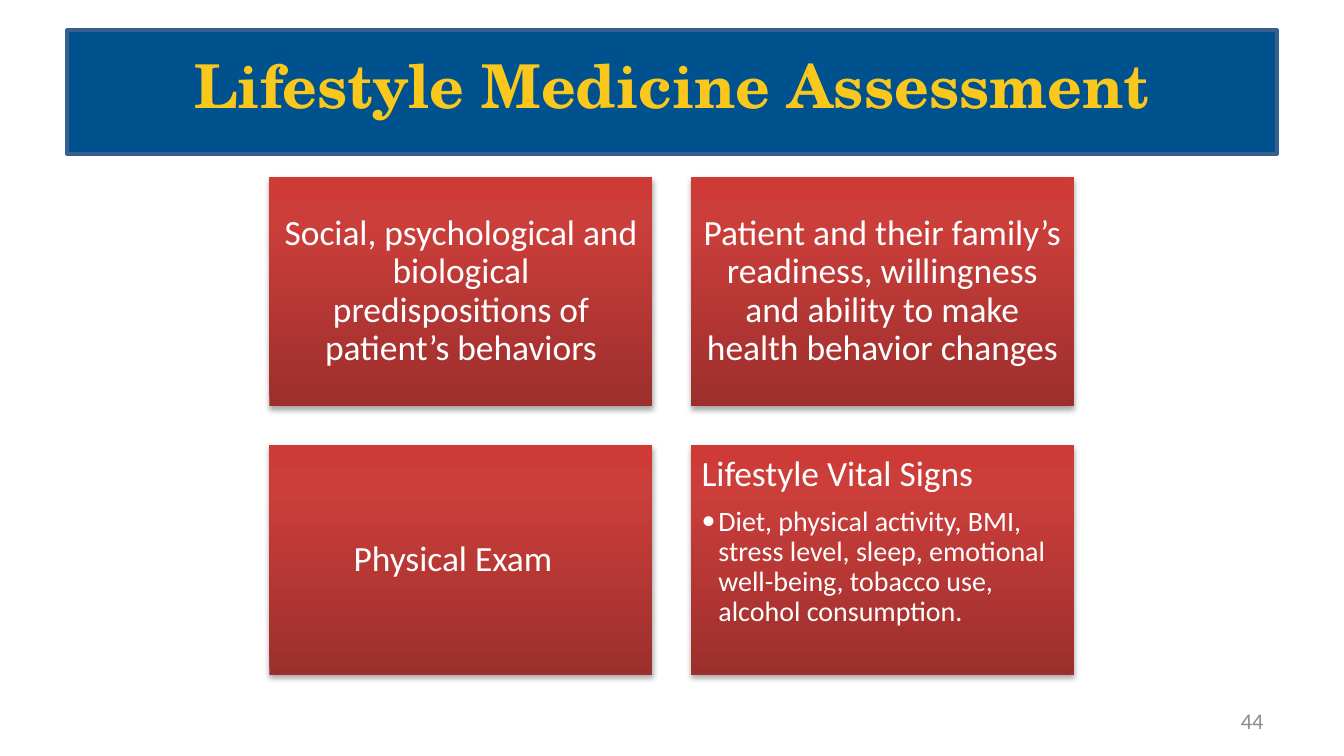
from copy import deepcopy
from dataclasses import dataclass
from itertools import product

from lxml.etree import SubElement
from pptx import Presentation
from pptx.dml.color import RGBColor
from pptx.enum.shapes import MSO_SHAPE as Shape
from pptx.enum.text import MSO_ANCHOR as Anchor, PP_ALIGN as Align
from pptx.oxml.ns import qn
from pptx.util import Pt

PX = 4572  # 200 px to the inch
COLORS = {
    "banner": "00528F", "banner_line": "3A5F8C", "title": "FAC71C",
    "white": "FFFFFF", "number": "8C8C8C", "shadow": "000000",
}
CARD_STOPS = [(0, "9C2F2D"), (0.8, "CB3E3A"), (1, "CE3B37")]
CARD_LEFT, CARD_TOP, CARD_WIDTH, CARD_HEIGHT = 401, 263, 570, 342
STEP_X, STEP_Y = 627, 399
INSET = 16
INDENT = 25


@dataclass(frozen=True)
class Card:
    heading: str
    bullet: str = ""
    right_inset: int = INSET


CARDS = [
    Card("Social, psychological and biological predispositions of patient’s behaviors"),
    Card("Patient and their family’s readiness, willingness and ability to make "
         "health behavior changes"),
    Card("Physical Exam", right_inset=40),
    Card("Lifestyle Vital Signs",
         "Diet, physical activity, BMI, stress level, sleep, emotional well-being, "
         "tobacco use, alcohol consumption."),
]


def rgb(name: str) -> RGBColor:
    return RGBColor.from_string(COLORS[name])


def set_frame(frame, anchor, left: int, top: int, right: int, bottom: int) -> None:
    frame.word_wrap = True
    frame.vertical_anchor = anchor
    frame.margin_left, frame.margin_top = left * PX, top * PX
    frame.margin_right, frame.margin_bottom = right * PX, bottom * PX


def write(para, text: str, *, size: float, color: str = "white", font: str = "Calibri",
          bold: bool = False, align=Align.LEFT, spacing: float = 0.9,
          after: float = 0, bullet: bool = False) -> None:
    if bullet:
        props = para._p.get_or_add_pPr()
        props.set("marL", str(INDENT * PX))
        props.set("indent", str(-INDENT * PX))
        SubElement(props, qn("a:buFont"), typeface=font)
        SubElement(props, qn("a:buChar"), char="•")
    para.alignment = align
    para.line_spacing = spacing
    para.space_after = Pt(after)
    span = para.add_run()
    span.text = text
    span.font.name, span.font.size, span.font.bold = font, Pt(size), bold
    span.font.color.rgb = rgb(color)


def add_box(slide, left: int, top: int, width: int, height: int):
    box = slide.shapes.add_shape(Shape.RECTANGLE, left * PX, top * PX, width * PX, height * PX)
    box.shadow.inherit = False
    return box


def add_text(slide, left: int, top: int, width: int, height: int):
    return slide.shapes.add_textbox(left * PX, top * PX, width * PX, height * PX).text_frame


def fill_gradient(box) -> None:
    box.fill.gradient()
    box.fill.gradient_angle = 90
    stops = box._element.spPr.find(".//" + qn("a:gsLst"))
    stops.append(deepcopy(stops[0]))
    for stop, (position, color) in zip(box.fill.gradient_stops, CARD_STOPS):
        stop.position = position
        stop.color.rgb = RGBColor.from_string(color)


def add_shadow(box) -> None:
    effects = box._element.spPr.find(qn("a:effectLst"))
    shadow = SubElement(effects, qn("a:outerShdw"), blurRad=str(Pt(3.1)),
                        dist=str(Pt(1.8)), dir="5400000", rotWithShape="0")
    color = SubElement(shadow, qn("a:srgbClr"), val=COLORS["shadow"])
    SubElement(color, qn("a:alpha"), val="35000")


def add_card(slide, card: Card, left: int, top: int) -> None:
    box = add_box(slide, left, top, CARD_WIDTH, CARD_HEIGHT)
    fill_gradient(box)
    box.line.fill.background()
    add_shadow(box)
    frame = box.text_frame
    set_frame(frame, Anchor.TOP if card.bullet else Anchor.MIDDLE,
              INSET, INSET, card.right_inset, INSET)
    write(frame.paragraphs[0], card.heading, size=19,
          align=Align.LEFT if card.bullet else Align.CENTER, after=7 if card.bullet else 0)
    if card.bullet:
        write(frame.add_paragraph(), card.bullet, size=15, bullet=True)


def main() -> None:
    deck = Presentation()
    deck.slide_width, deck.slide_height = 2000 * PX, 1125 * PX
    page = deck.slides.add_slide(deck.slide_layouts[6])

    banner = add_box(page, 100, 45, 1800, 184)
    banner.fill.solid()
    banner.fill.fore_color.rgb = rgb("banner")
    banner.line.color.rgb = rgb("banner_line")
    banner.line.width = Pt(2)

    title = add_text(page, 100, 76, 1800, 188)
    set_frame(title, Anchor.TOP, 20, 8, 20, 10)
    write(title.paragraphs[0], "Lifestyle Medicine Assessment", size=32.4, color="title",
          font="TeX Gyre Schola", bold=True, align=Align.CENTER)

    for card, (row, column) in zip(CARDS, product(range(2), repeat=2)):
        add_card(page, card, CARD_LEFT + column * STEP_X, CARD_TOP + row * STEP_Y)

    number = add_text(page, 1434, 1043, 466, 60)
    set_frame(number, Anchor.MIDDLE, 20, 10, 20, 10)
    write(number.paragraphs[0], "44", size=12, color="number", align=Align.RIGHT, spacing=1.0)

    deck.save("out.pptx")


if __name__ == "__main__":
    main()
